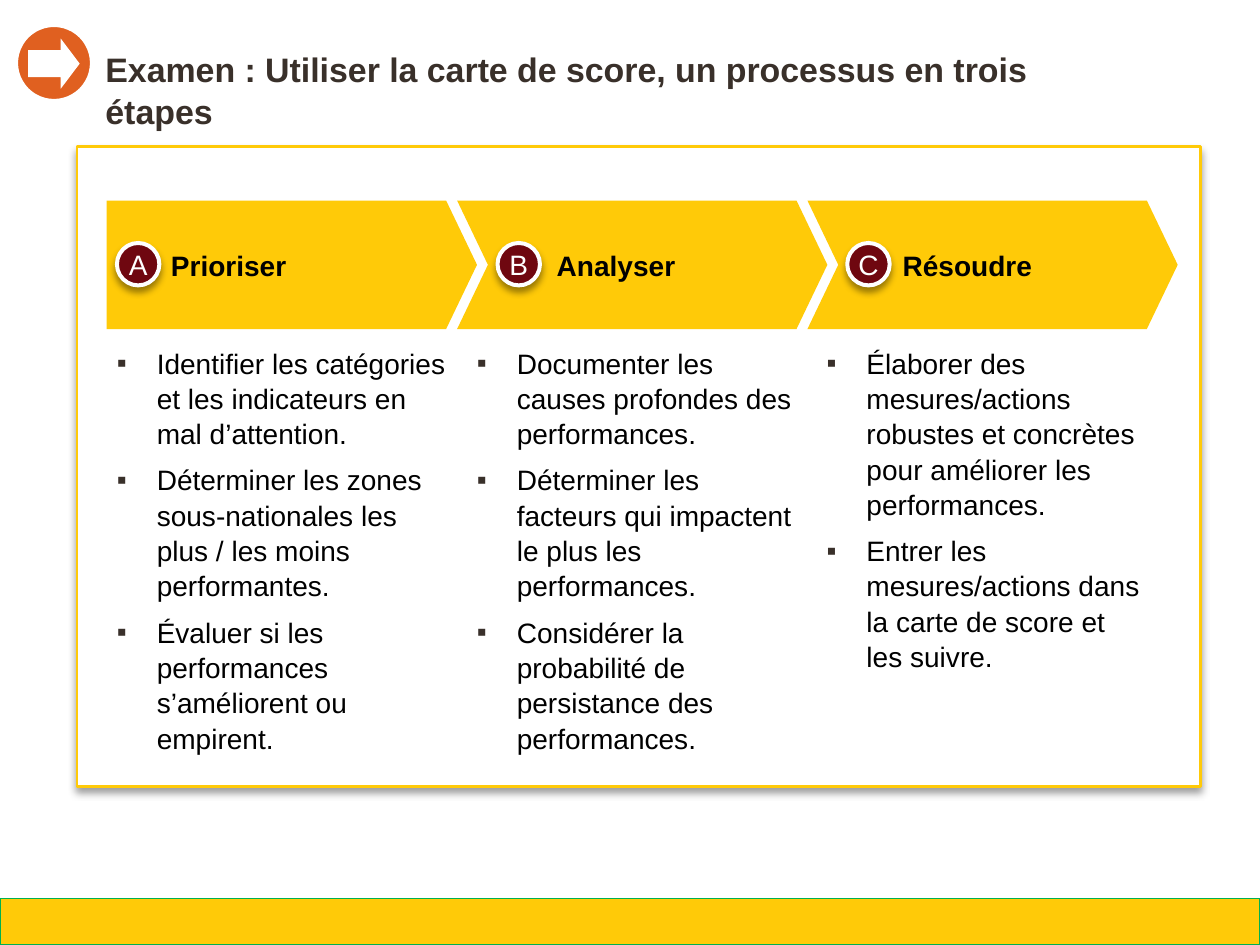
import dataclasses

import lxml.etree
import pptx
import pptx.dml.color
import pptx.enum.shapes
import pptx.enum.text
import pptx.oxml.ns
import pptx.util

Inches = pptx.util.Inches
Pt = pptx.util.Pt
Shapes = pptx.enum.shapes.MSO_SHAPE
Align = pptx.enum.text.PP_ALIGN
Anchor = pptx.enum.text.MSO_ANCHOR
qn = pptx.oxml.ns.qn


@dataclasses.dataclass(frozen=True)
class Theme:
    font: str = "Arial"
    title_size: float = 19
    body_size: float = 15.7
    yellow: str = "FFCA08"
    green: str = "00B050"
    orange: str = "E06020"
    maroon: str = "6F0710"
    dark: str = "39302A"
    black: str = "000000"
    white: str = "FFFFFF"


def rgb(value):
    return pptx.dml.color.RGBColor.from_string(value)


class SlideBuilder:
    def __init__(self, page, theme):
        self.page = page
        self.theme = theme

    def paint(self, shape, fill, line=None, width=0):
        shape.shadow.inherit = False
        shape.fill.solid()
        shape.fill.fore_color.rgb = rgb(fill)
        if line:
            shape.line.color.rgb = rgb(line)
            shape.line.width = Pt(width)
        else:
            shape.line.fill.background()

    def shape(self, kind, left, top, width, height, fill, line=None, weight=0):
        shape = self.page.shapes.add_shape(
            kind, Inches(left), Inches(top), Inches(width), Inches(height))
        self.paint(shape, fill, line, weight)
        return shape

    def drop_shadow(self, shape):
        effects = shape._element.spPr.find(qn("a:effectLst"))
        shadow = lxml.etree.SubElement(
            effects, qn("a:outerShdw"), blurRad=str(Pt(4)), dist=str(Pt(3)),
            dir="5400000", algn="t", rotWithShape="0")
        color = lxml.etree.SubElement(shadow, qn("a:srgbClr"), val=self.theme.black)
        lxml.etree.SubElement(color, qn("a:alpha"), val="40000")

    def chevron(self, left, top, width, height, tip, notch):
        right, middle, bottom = left + width, top + height / 2, top + height
        outline = [(right - tip, top), (right, middle), (right - tip, bottom),
                   (left, bottom), (left + notch, middle)]
        builder = self.page.shapes.build_freeform(Inches(left), Inches(top))
        builder.add_line_segments([(Inches(x), Inches(y)) for x, y in outline], close=True)
        self.paint(builder.convert_to_shape(), self.theme.yellow)

    def frame(self, shape, anchor):
        frame = shape.text_frame
        frame.word_wrap = True
        frame.vertical_anchor = anchor
        frame.margin_left = frame.margin_right = 0
        frame.margin_top = frame.margin_bottom = 0
        return frame

    def add_span(self, para, text, size, color, bold=False):
        span = para.add_run()
        span.text = text
        span.font.name = self.theme.font
        span.font.size = Pt(size)
        span.font.bold = bold
        span.font.color.rgb = rgb(color)

    def text_box(self, left, top, width, height, anchor):
        box = self.page.shapes.add_textbox(
            Inches(left), Inches(top), Inches(width), Inches(height))
        return self.frame(box, anchor)

    def label(self, text, left, top, width, height, size, color,
              anchor=Anchor.MIDDLE, spacing=1.0):
        para = self.text_box(left, top, width, height, anchor).paragraphs[0]
        para.line_spacing = spacing
        self.add_span(para, text, size, color, bold=True)

    def badge(self, letter, left, top, size):
        badge = self.shape(Shapes.OVAL, left, top, size, size,
                           self.theme.maroon, self.theme.white, 2.25)
        self.drop_shadow(badge)
        frame = self.frame(badge, Anchor.MIDDLE)
        frame.word_wrap = False
        para = frame.paragraphs[0]
        para.alignment = Align.CENTER
        self.add_span(para, letter, self.theme.body_size, self.theme.white)

    def bullets(self, items, left, top, width, height):
        frame = self.text_box(left, top, width, height, Anchor.TOP)
        for index, item in enumerate(items):
            para = frame.add_paragraph() if index else frame.paragraphs[0]
            props = para._p.get_or_add_pPr()
            props.set("marL", str(Inches(0.31)))
            props.set("indent", str(-Inches(0.31)))
            color = lxml.etree.SubElement(props, qn("a:buClr"))
            lxml.etree.SubElement(color, qn("a:srgbClr"), val=self.theme.dark)
            lxml.etree.SubElement(props, qn("a:buFont"), typeface=self.theme.font)
            lxml.etree.SubElement(props, qn("a:buChar"), char="▪")
            para.line_spacing = 1.05
            para.space_after = Pt(6)
            self.add_span(para, item, self.theme.body_size, self.theme.black)


# Steps: letter, name, badge left, name left, list left, list width, list items
STEPS = [
    ("A", "Prioriser", 0.91, 1.33, 0.91, 2.56, [
        "Identifier les catégories et les indicateurs en mal d’attention.",
        "Déterminer les zones sous-nationales les plus / les moins performantes.",
        "Évaluer si les performances s’améliorent ou empirent.",
    ]),
    ("B", "Analyser", 3.87, 4.33, 3.71, 2.48, [
        "Documenter les causes profondes des performances.",
        "Déterminer les facteurs qui impactent le plus les performances.",
        "Considérer la probabilité de persistance des performances.",
    ]),
    ("C", "Résoudre", 6.59, 7.02, 6.43, 2.44, [
        "Élaborer des mesures/actions robustes et concrètes pour améliorer les performances.",
        "Entrer les mesures/actions dans la carte de score et les suivre.",
    ]),
]


def main():
    theme = Theme()
    deck = pptx.Presentation()
    deck.slide_width, deck.slide_height = Inches(9.8), Inches(7.35)
    page = deck.slides.add_slide(deck.slide_layouts[6])
    builder = SlideBuilder(page, theme)

    # Footer band and framed panel
    builder.shape(Shapes.RECTANGLE, 0, 6.99, 9.8, 0.36, theme.yellow, theme.green, 0.75)
    panel = builder.shape(Shapes.RECTANGLE, 0.6, 1.14, 8.74, 4.98,
                          theme.white, theme.yellow, 1.5)
    builder.drop_shadow(panel)

    # Title with its arrow icon
    builder.label("Examen : Utiliser la carte de score, un processus en trois étapes",
                  0.82, 0.37, 7.75, 0.64, theme.title_size, theme.dark,
                  Anchor.TOP, spacing=1.03)
    builder.shape(Shapes.OVAL, 0.13, 0.2, 0.58, 0.58, theme.orange, theme.white, 1.5)
    arrow = builder.shape(Shapes.RIGHT_ARROW, 0.22, 0.3, 0.4, 0.39, theme.white)
    arrow.adjustments[0], arrow.adjustments[1] = 0.54, 0.377

    # Three process steps: chevron, name, badge and list
    tip = 0.24
    for index, (letter, name, badge_left, name_left, list_left, width, items) in enumerate(STEPS):
        builder.chevron(0.83 + 2.725 * index, 1.56, 2.88, 1, tip, tip if index else 0)
        builder.label(name, name_left, 1.93, 1.88, 0.26, theme.body_size, theme.black)
        builder.badge(letter, badge_left, 1.89, 0.33)
        builder.bullets(items, list_left, 2.68, width, 3.1)

    deck.save("out.pptx")


if __name__ == "__main__":
    main()
